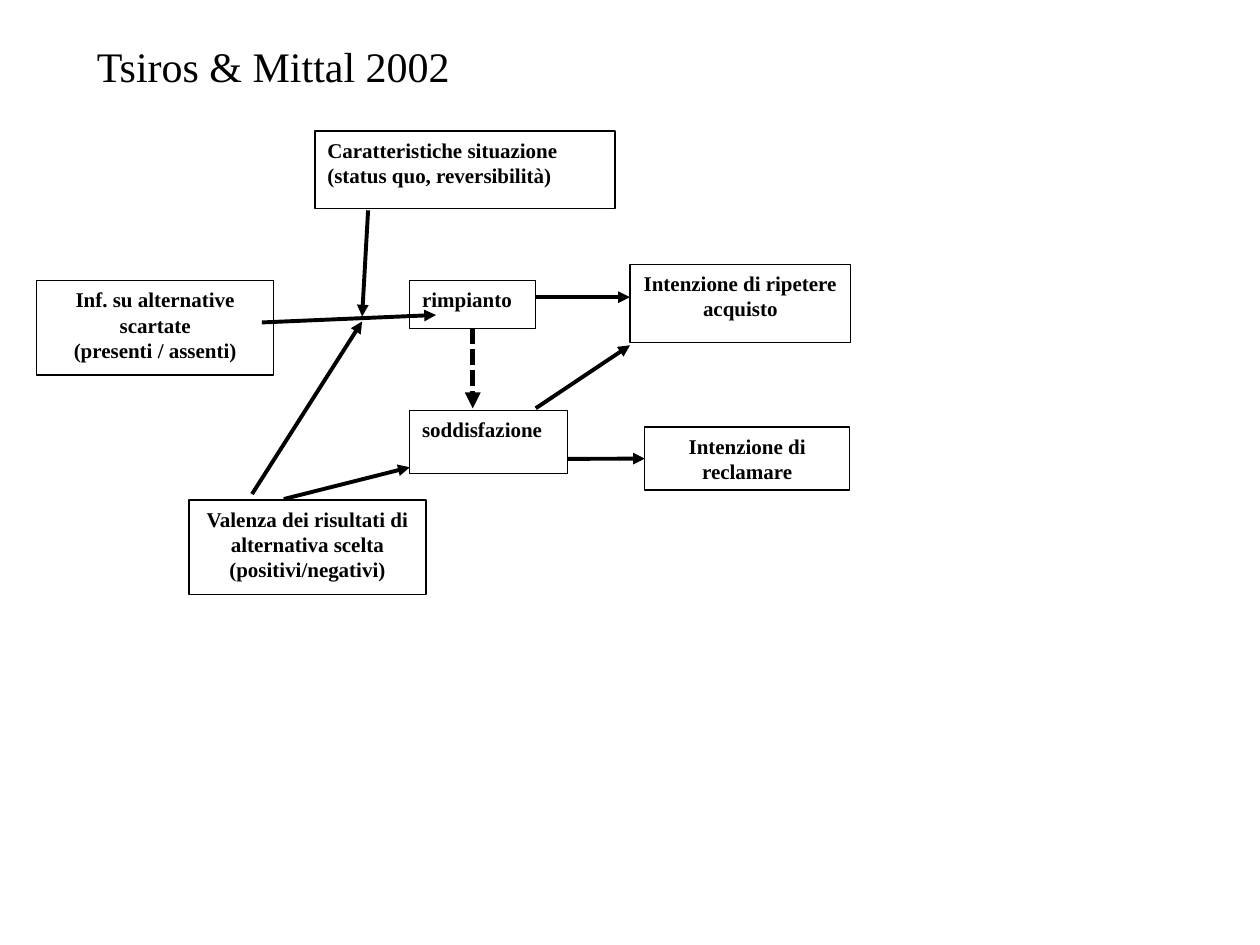
from lxml import etree
from pptx import Presentation
from pptx.dml.color import RGBColor
from pptx.enum.dml import MSO_LINE
from pptx.enum.shapes import MSO_CONNECTOR, MSO_SHAPE
from pptx.enum.text import MSO_ANCHOR, MSO_AUTO_SIZE, PP_ALIGN
from pptx.oxml.ns import qn
from pptx.util import Cm, Pt

LEFT, CENTER = PP_ALIGN.LEFT, PP_ALIGN.CENTER
TOP = MSO_ANCHOR.TOP
RECT = MSO_SHAPE.RECTANGLE
STRAIGHT = MSO_CONNECTOR.STRAIGHT
DOTTED = MSO_LINE.SQUARE_DOT
FONT = "Times New Roman"
COLORS = {name: RGBColor.from_string(value) for name, value in
          {"ink": "000000", "paper": "FFFFFF"}.items()}


def set_text(sp, lines, size=12, bold=True, align=LEFT):
    tf = sp.text_frame
    tf.word_wrap = True
    tf.vertical_anchor = TOP
    tf.auto_size = MSO_AUTO_SIZE.NONE
    for i, line in enumerate(lines):
        p = tf.add_paragraph() if i else tf.paragraphs[0]
        p.alignment = align
        r = p.add_run()
        r.text = line
        r.font.name = FONT
        r.font.size = Pt(size)
        r.font.bold = bold
        r.font.color.rgb = COLORS["ink"]


def add_arrow(x1, y1, x2, y2, width=2.25):
    line = s.shapes.add_connector(STRAIGHT, Cm(x1), Cm(y1), Cm(x2), Cm(y2))
    line.line.color.rgb = COLORS["ink"]
    line.line.width = Pt(width)
    ln = line.line._get_or_add_ln()
    etree.SubElement(ln, qn("a:tailEnd"), type="triangle")
    etree.SubElement(line._element.spPr, qn("a:effectLst"))
    return line


prs = Presentation()
prs.slide_width, prs.slide_height = Cm(25.4), Cm(19.05)
s = prs.slides.add_slide(prs.slide_layouts[5])

title = s.shapes.title
title.left, title.top, title.width, title.height = Cm(1.7), Cm(0.68), Cm(8.26), Cm(1.27)
set_text(title, ["Tsiros & Mittal 2002"], size=24, bold=False)

# name: left, top, width, height, alignment, paragraphs
BOXES = {
    "situazione": (6.35, 2.64, 6.05, 1.57, LEFT,
                   ["Caratteristiche situazione (status quo, reversibilità)"]),
    "ripetere": (12.7, 5.33, 4.45, 1.57, CENTER,
                 ["Intenzione di ripetere", "acquisto"]),
    "reclamare": (13, 8.61, 4.13, 1.27, CENTER,
                  ["Intenzione di", "reclamare"]),
    "alternative": (0.74, 5.66, 4.78, 1.9, CENTER,
                    ["Inf. su alternative scartate", "(presenti / assenti)"]),
    "valenza": (3.81, 10.08, 4.78, 1.9, CENTER,
                ["Valenza dei risultati di alternativa scelta",
                 "(positivi/negativi)"]),
    "rimpianto": (8.26, 5.66, 2.54, 0.96, LEFT, ["rimpianto"]),
    "soddisfazione": (8.26, 8.28, 3.18, 1.27, LEFT, ["soddisfazione"]),
}
boxes = {}
for name, (x, y, w, h, align, lines) in BOXES.items():
    sp = s.shapes.add_shape(RECT, Cm(x), Cm(y), Cm(w), Cm(h))
    sp.shadow.inherit = False
    sp.fill.solid()
    sp.fill.fore_color.rgb = COLORS["paper"]
    sp.line.color.rgb = COLORS["ink"]
    sp.line.width = Pt(0.75)
    set_text(sp, lines, align=align)
    boxes[name] = sp

for ends in [
    (5.28, 6.5, 8.79, 6.35),      # alternative to rimpianto
    (5.08, 9.96, 7.3, 6.48),      # valenza to the arrow above
    (7.42, 4.24, 7.3, 6.38),      # situazione to the arrow below
    (10.8, 5.99, 12.7, 5.99),     # rimpianto to ripetere
    (10.8, 8.23, 12.7, 6.96),     # soddisfazione to ripetere
    (5.72, 10.06, 8.26, 9.42),    # valenza to soddisfazione
]:
    add_arrow(*ends)

dotted = add_arrow(9.53, 6.62, 9.53, 8.23, width=3)
dotted.line.dash_style = DOTTED
dotted.begin_connect(boxes["rimpianto"], 2)

complaint = add_arrow(11.44, 9.25, 13, 9.25)
complaint.end_connect(boxes["reclamare"], 1)

prs.save("out.pptx")
